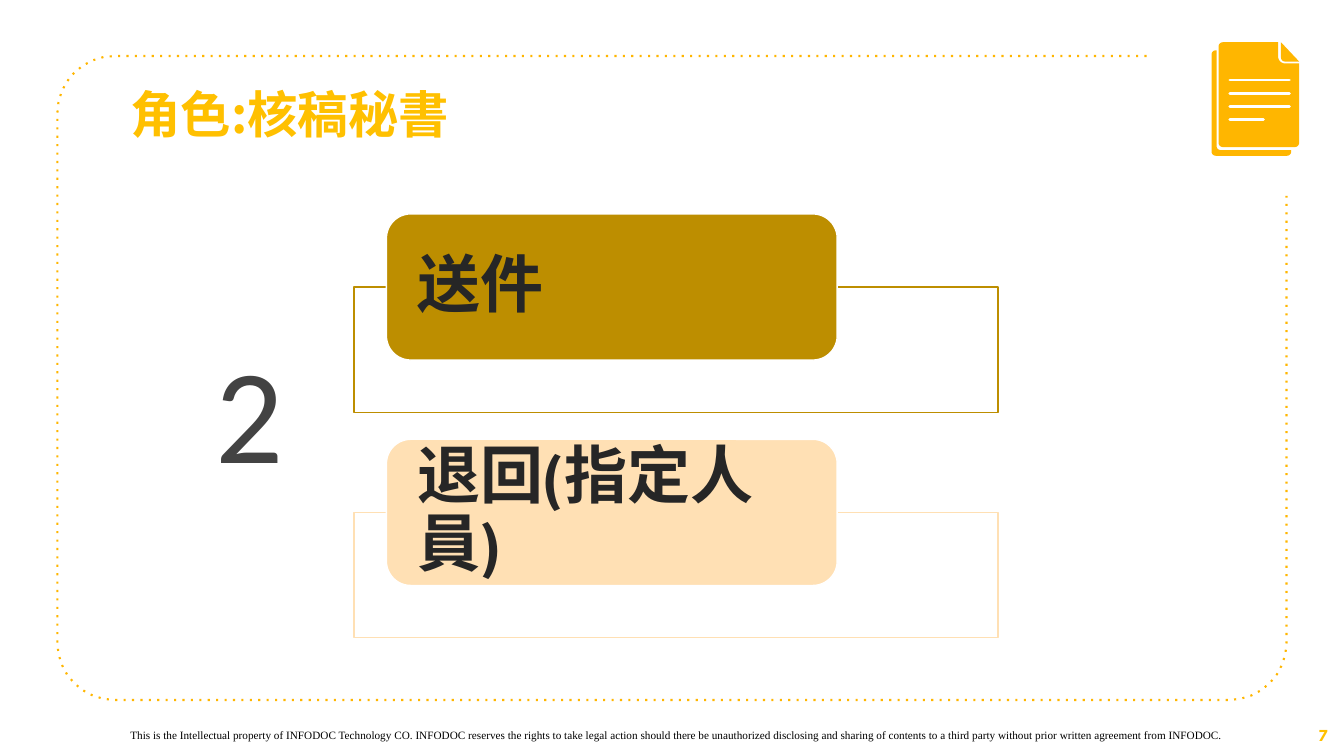
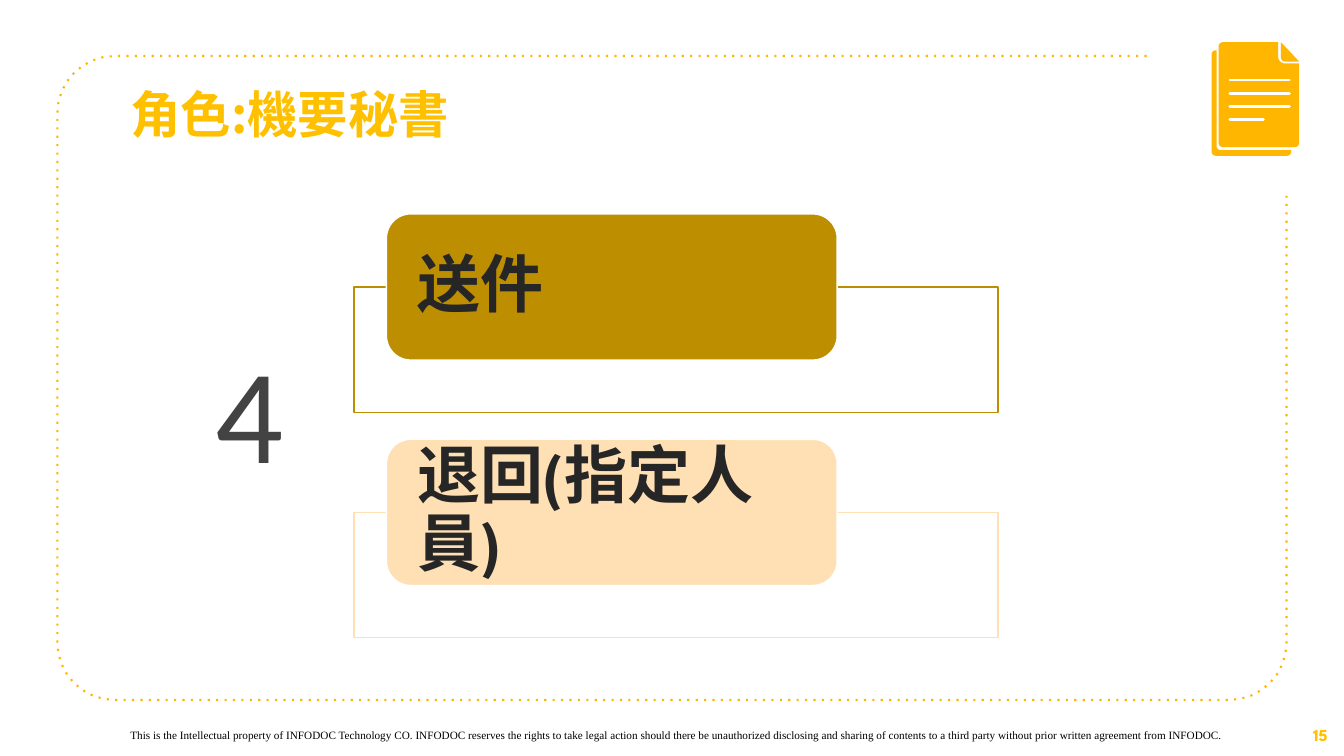
from math import cos, radians, sin

from lxml.etree import SubElement
from pptx import Presentation
from pptx.dml.color import RGBColor
from pptx.enum.shapes import MSO_CONNECTOR, MSO_SHAPE
from pptx.enum.text import MSO_ANCHOR, PP_ALIGN
from pptx.oxml.ns import qn
from pptx.util import Pt

COLORS = {
    "frame": "FFB600",
    "title": "FFC000",
    "send": "BD8E00",
    "return": "FFE0B4",
    "white": "FFFFFF",
    "action": "262626",
    "count": "434343",
    "footer": "000000",
}
DISPLAY_FONT = "League Spartan"
FOOTER = (
    "This is the Intellectual property of INFODOC Technology CO. INFODOC reserves "
    "the rights to take legal action should there be unauthorized disclosing and "
    "sharing of contents to a third party without prior written agreement from INFODOC."
)
ACTIONS = [("送件", "send"), ("退回(指定人員)", "return")]
ACTION_STEP = 161
ROLES = [("角色:核稿秘書", "2", "7"), ("角色:機要秘書", "4", "15")]


def color(name):
    return RGBColor.from_string(COLORS[name])


def arc(center_x, center_y, radius, start, end, steps=8):
    """Points along an arc; angles in degrees, clockwise from the right."""
    angles = [radians(start + (end - start) * i / steps) for i in range(steps + 1)]
    return [(center_x + radius * cos(a), center_y + radius * sin(a)) for a in angles]


def left_and_bottom(left, top, right, bottom, radius):
    """Outline through the top left, bottom left and bottom right corners."""
    return (arc(left + radius, top + radius, radius, 270, 180)
            + arc(left + radius, bottom - radius, radius, 180, 90)
            + arc(right - radius, bottom - radius, radius, 90, 0))


def add_outline(slide, points, close=True):
    start, *others = [(Pt(x), Pt(y)) for x, y in points]
    builder = slide.shapes.build_freeform(*start)
    builder.add_line_segments(others, close=close)
    outline = builder.convert_to_shape()
    outline.shadow.inherit = False
    return outline


def write(shape, text, size, font, color_name, bold=False, align=PP_ALIGN.LEFT,
          anchor=MSO_ANCHOR.TOP, line_spacing=None):
    frame = shape.text_frame
    frame.word_wrap = True
    frame.vertical_anchor = anchor
    paragraph = frame.paragraphs[0]
    paragraph.text = text
    paragraph.alignment = align
    paragraph.line_spacing = line_spacing
    paragraph.font.size = Pt(size)
    paragraph.font.name = font
    paragraph.font.bold = bold
    paragraph.font.color.rgb = color(color_name)


def add_label(slide, box, *args, **style):
    label = slide.shapes.add_textbox(*map(Pt, box))
    write(label, *args, **style)


def add_box(slide, kind, box, fill, line):
    shape = slide.shapes.add_shape(kind, *map(Pt, box))
    shape.shadow.inherit = False
    shape.fill.solid()
    shape.fill.fore_color.rgb = color(fill)
    shape.line.color.rgb = color(line)
    shape.line.width = Pt(1)
    return shape


def add_frame(slide):
    points = [(819, 40), *left_and_bottom(41, 40, 919, 500, 41), (919, 140)]
    border = add_outline(slide, points, close=False)
    border.fill.background()
    border.line.color.rgb = color("frame")
    border.line.width = Pt(1.5)
    line = border._element.spPr.find(qn("a:ln"))
    SubElement(line, qn("a:prstDash"), val="dot")


def add_document_icon(slide):
    # Back page, front page and folded corner
    back_page = (left_and_bottom(865.4, 36, 922.3, 111.3, 3)
                 + [(922.3, 107.3)] + arc(872, 104.3, 3, 90, 180) + [(869, 36)])
    front_page = (left_and_bottom(870.5, 30.2, 928, 105.1, 3)
                  + [(928, 45.4)] + arc(918, 40.4, 5, 90, 180) + [(913, 30.2)])
    fold = [(915, 30.2), *arc(918, 41, 3, 180, 90), (928, 44)]
    for points in (back_page, front_page, fold):
        part = add_outline(slide, points)
        part.fill.solid()
        part.fill.fore_color.rgb = color("frame")
        part.line.fill.background()

    # Lines of writing
    for row, right in enumerate((921, 921, 921, 902.5)):
        y = Pt(57.2 + row * 9.4)
        writing = slide.shapes.add_connector(
            MSO_CONNECTOR.STRAIGHT, Pt(878.5), y, Pt(right), y)
        writing.line.color.rgb = color("white")
        writing.line.width = Pt(2)
        writing.line._ln.set("cap", "rnd")
        SubElement(writing._element.spPr, qn("a:effectLst"))


def add_action(slide, row, text, accent):
    offset = row * ACTION_STEP
    panel = add_box(slide, MSO_SHAPE.RECTANGLE, (253, 205 + offset, 460, 89.5),
                    "white", accent)
    fill = panel._element.spPr.find(qn("a:solidFill"))
    SubElement(fill[0], qn("a:alpha"), val="90000")

    tab = add_box(slide, MSO_SHAPE.ROUNDED_RECTANGLE,
                  (276, 152.8 + offset, 322, 104.4), accent, "white")
    frame = tab.text_frame
    frame.margin_left = frame.margin_right = Pt(17.3)
    frame.margin_top = frame.margin_bottom = 0
    write(tab, text, 45, DISPLAY_FONT, "action", bold=True,
          anchor=MSO_ANCHOR.MIDDLE, line_spacing=0.9)


def add_role_slide(deck, title, count, page):
    slide = deck.slides.add_slide(deck.slide_layouts[6])
    # Shared frame, footer and icon
    add_frame(slide)
    add_label(slide, (86, 517, 800, 17), FOOTER, 8, "Times New Roman", "footer")
    add_document_icon(slide)
    add_label(slide, (739.5, 510, 216, 29), page, 12, DISPLAY_FONT, "title",
              bold=True, align=PP_ALIGN.RIGHT, anchor=MSO_ANCHOR.MIDDLE)

    # Role and its actions
    add_label(slide, (86, 60.5, 380, 53), title, 36, "Noto Sans CJK SC", "title",
              bold=True, line_spacing=0.9)
    for row, (text, accent) in enumerate(ACTIONS):
        add_action(slide, row, text, accent)
    add_label(slide, (140, 220, 76, 146), count, 96, "Calibri", "count",
              align=PP_ALIGN.CENTER, anchor=MSO_ANCHOR.MIDDLE)


def main():
    deck = Presentation()
    deck.slide_width, deck.slide_height = Pt(960), Pt(540)
    for title, count, page in ROLES:
        add_role_slide(deck, title, count, page)
    deck.save("out.pptx")


if __name__ == "__main__":
    main()
